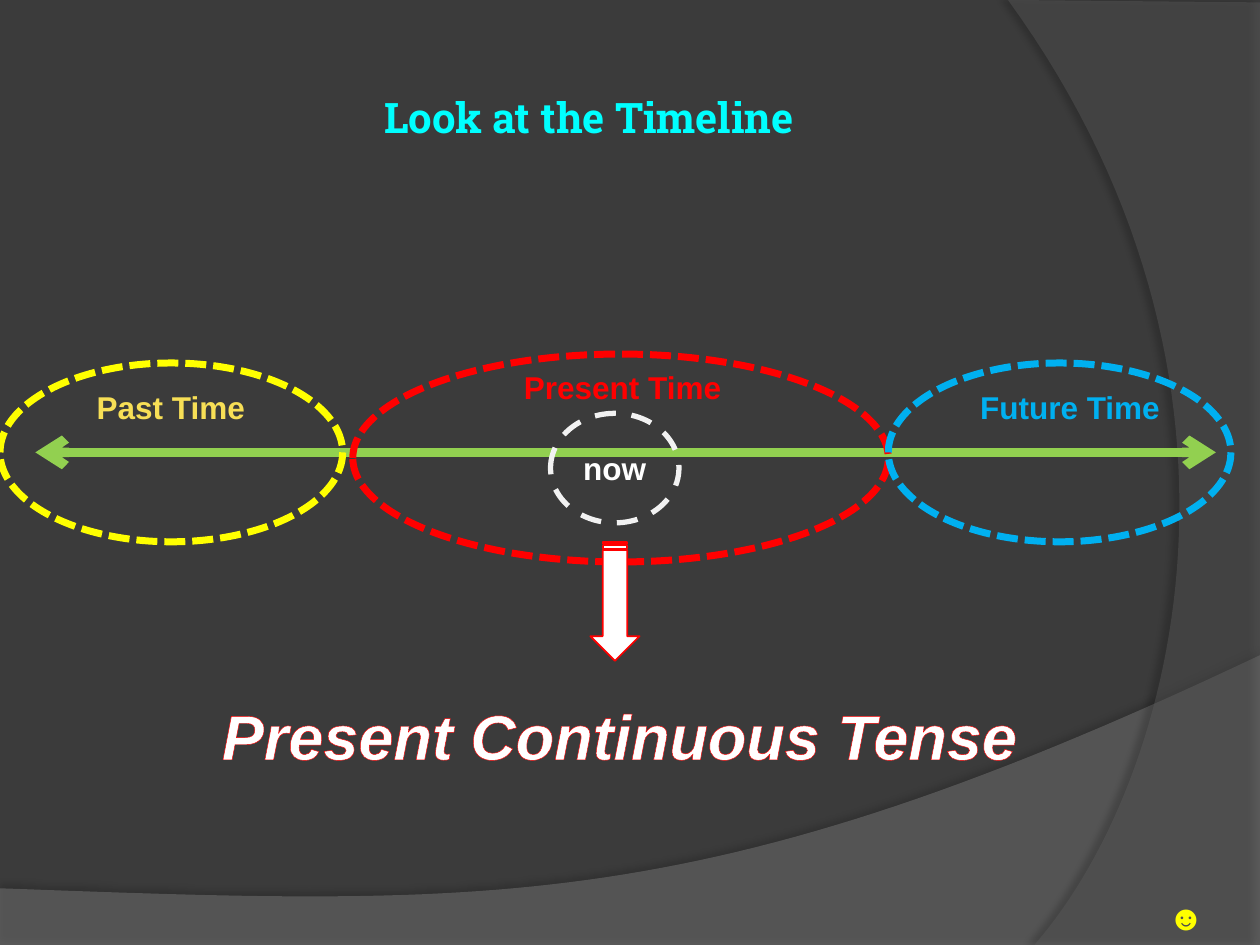
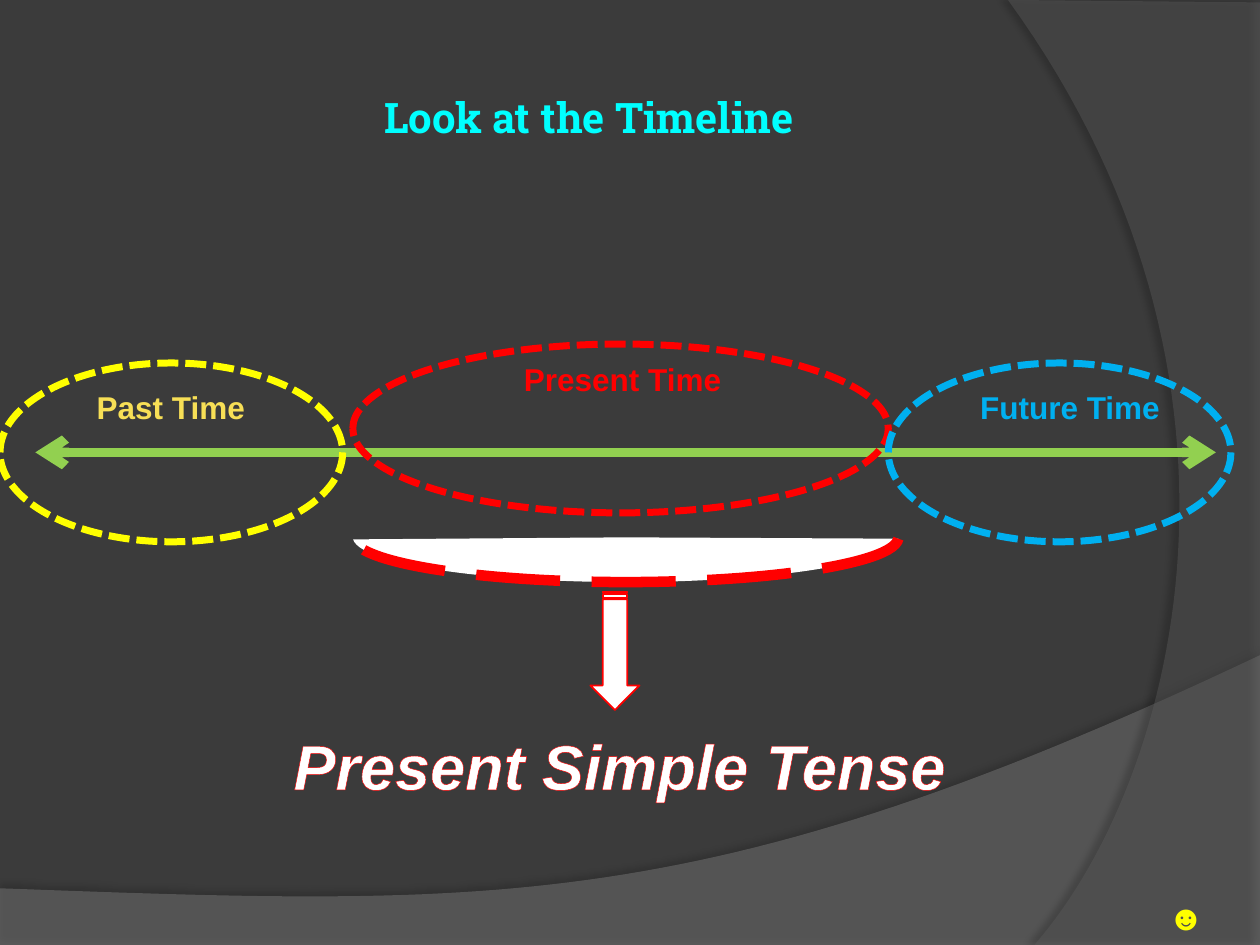
from lxml.etree import SubElement
from pptx import Presentation
from pptx.dml.color import RGBColor
from pptx.enum.dml import MSO_LINE
from pptx.enum.shapes import MSO_CONNECTOR, MSO_SHAPE
from pptx.enum.text import MSO_ANCHOR, MSO_AUTO_SIZE, PP_ALIGN
from pptx.oxml.ns import qn
from pptx.util import Pt

COLORS = {
    "background": "3B3B3B", "wave": "7F7F7F", "curve": "5E5E5E", "shadow": "000000",
    "axis": "92D050", "past_label": "F7DF56", "yellow": "FFFF00", "blue": "00B0F0",
    "red": "FF0000", "title": "00FFFF", "white": "FFFFFF", "now": "F2F2F2",
}
WIDTH, HEIGHT = 720, 540
MIDDLE = 351.4  # centre line of the down arrow


def rgb(name):
    return RGBColor.from_string(COLORS[name])


def cubic(p0, p1, p2, p3, steps=60):
    """Points along a Bezier curve, without its first point."""
    points = []
    for i in range(1, steps + 1):
        t = i / steps
        u = 1 - t
        points.append(tuple(
            u**3 * a + 3 * u * u * t * b + 3 * u * t * t * c + t**3 * d
            for a, b, c, d in zip(p0, p1, p2, p3)))
    return points


def add_alpha(fill_parent, percent):
    color = fill_parent.find(".//" + qn("a:srgbClr"))
    SubElement(color, qn("a:alpha"), val=str(percent * 1000))


def write(tf, text, color="white", size=18, font="Arial", italic=False,
          align=PP_ALIGN.LEFT, outline=None):
    p = tf.paragraphs[0]
    p.alignment = align
    r = p.add_run()
    r.text = text
    r.font.name, r.font.size = font, Pt(size)
    r.font.bold, r.font.italic = True, italic
    r.font.color.rgb = rgb(color)
    if outline:
        rpr = r.font._element
        ln = SubElement(rpr, qn("a:ln"), w=str(Pt(0.75)))
        SubElement(SubElement(ln, qn("a:solidFill")), qn("a:srgbClr"), val=COLORS[outline])
        rpr.insert(0, ln)


class Deck:
    def __init__(self):
        self.prs = Presentation()
        self.prs.slide_width, self.prs.slide_height = Pt(WIDTH), Pt(HEIGHT)
        fill = self.prs.slide_master.background.fill
        fill.solid()
        fill.fore_color.rgb = rgb("background")
        self.s = None

    def new_slide(self):
        self.s = self.prs.slides.add_slide(self.prs.slide_layouts[6])

    def text(self, text, x, y, w, h, **style):
        sp = self.s.shapes.add_textbox(Pt(x), Pt(y), Pt(w), Pt(h))
        tf = sp.text_frame
        tf.word_wrap = True
        tf.auto_size = MSO_AUTO_SIZE.SHAPE_TO_FIT_TEXT
        write(tf, text, **style)

    def shape(self, kind, x, y, w, h, line, weight, dash=None, fill=None, rotation=0):
        sp = self.s.shapes.add_shape(kind, Pt(x), Pt(y), Pt(w), Pt(h))
        sp.shadow.inherit = False
        sp.rotation = rotation
        if fill:
            sp.fill.solid()
            sp.fill.fore_color.rgb = rgb(fill)
        else:
            sp.fill.background()
        sp.line.color.rgb = rgb(line)
        sp.line.width = Pt(weight)
        if dash:
            sp.line.dash_style = dash
        return sp

    def period(self, x, y, w, h, color):
        self.shape(MSO_SHAPE.OVAL, x, y, w, h, color, 4, MSO_LINE.SQUARE_DOT)

    def band(self, points, color, alpha, shadow_alpha, distance, direction):
        """Translucent background outline that casts a soft shadow."""
        emu = [(Pt(x), Pt(y)) for x, y in points]
        builder = self.s.shapes.build_freeform(*emu[0])
        builder.add_line_segments(emu[1:], close=True)
        sp = builder.convert_to_shape()
        sp.fill.solid()
        sp.fill.fore_color.rgb = rgb(color)
        sp.line.fill.background()
        sp.shadow.inherit = False
        sppr = sp._element.spPr
        add_alpha(sppr, alpha)
        shadow = SubElement(sppr.find(qn("a:effectLst")), qn("a:outerShdw"),
                            blurRad=str(Pt(4)), dist=str(Pt(distance)),
                            dir=str(direction * 60000), algn="ctr", rotWithShape="0")
        SubElement(shadow, qn("a:srgbClr"), val=COLORS["shadow"])
        add_alpha(shadow, shadow_alpha)

    def bands(self):
        wave = [(0, 507.6), (0, 540.7), (WIDTH, 540.7), (WIDTH, 374.4)]
        wave += cubic(wave[-1], (402.5, 524.9), (281.5, 517.7), wave[0])
        self.band(wave, "wave", 45, 35, 3.5, 270)
        curve = [(WIDTH, 1.4), (WIDTH, HEIGHT), (591.1, HEIGHT)]
        curve += cubic(curve[-1], (673.2, 445.7), (733, 216), (576, 0))
        self.band(curve, "curve", 40, 45, 4, 180)

    def axis(self, x1, x2, y):
        c = self.s.shapes.add_connector(MSO_CONNECTOR.STRAIGHT, Pt(x1), Pt(y), Pt(x2), Pt(y))
        c.line.color.rgb = rgb("axis")
        c.line.width = Pt(5.5)
        ln = c.line._get_or_add_ln()
        for end in ("a:headEnd", "a:tailEnd"):
            SubElement(ln, qn(end), type="arrow")
        SubElement(c._element.spPr, qn("a:effectLst"))

    def now(self):
        sp = self.shape(MSO_SHAPE.OVAL, 314.6, 236.2, 73.4, 62.6, "now", 3, MSO_LINE.DASH)
        tf = sp.text_frame
        tf.word_wrap = False
        tf.vertical_anchor = MSO_ANCHOR.MIDDLE
        write(tf, "now", align=PP_ALIGN.CENTER)

    def down_arrow(self, center_y):
        length, breadth = 67.7, 28.1
        self.shape(MSO_SHAPE.STRIPED_RIGHT_ARROW, MIDDLE - length / 2, center_y - breadth / 2,
                   length, breadth, "red", 1, fill="white", rotation=90)

    def bowl(self):
        sp = self.shape(MSO_SHAPE.ARC, 201.6, 281.5, 311.8, 51.1, "red", 6,
                        MSO_LINE.LONG_DASH, fill="white", rotation=180)
        for i, degrees in enumerate((180.28, 359.57)):
            sp.adjustments[i] = degrees * 0.6

    def timeline(self, label_y, present_y, present_h):
        """Background, axis, three periods and title."""
        self.new_slide()
        self.bands()
        self.axis(20.2, 694.8, 258.5)
        self.text("Past Time", 48.2, 218.2, 113, 28.8, color="past_label")
        self.text("Future Time", 553, 218.2, 130.3, 28.8, color="blue")
        self.text("Present Time", 292.3, label_y, 130.3, 28.8, color="red")
        self.period(201.6, present_y, 306, present_h, "red")
        for x, color in ((0, "yellow"), (507.6, "blue")):
            self.period(x, 207.4, 195.8, 102.2, color)
        self.text("Look at the Timeline", 212.4, 49, 334.8, 36,
                  color="title", size=24, font="Roboto Slab")

    def conclusion(self, tense, arrow_y, tense_y):
        self.down_arrow(arrow_y)
        self.text(tense, 48.2, tense_y, 612, 51.1, size=36, italic=True,
                  align=PP_ALIGN.CENTER, outline="red")
        self.text("☻", 660.2, 508.3, 39.6, 31.7, color="yellow", size=20)


def main():
    deck = Deck()
    deck.timeline(label_y=206.6, present_y=202.3, present_h=118.8)
    deck.now()
    deck.conclusion("Present Continuous Tense", arrow_y=343.8, tense_y=394.6)

    deck.timeline(label_y=202.3, present_y=196.6, present_h=96.5)
    deck.bowl()
    deck.conclusion("Present Simple Tense", arrow_y=371.9, tense_y=411.8)
    deck.prs.save("out.pptx")


if __name__ == "__main__":
    main()
